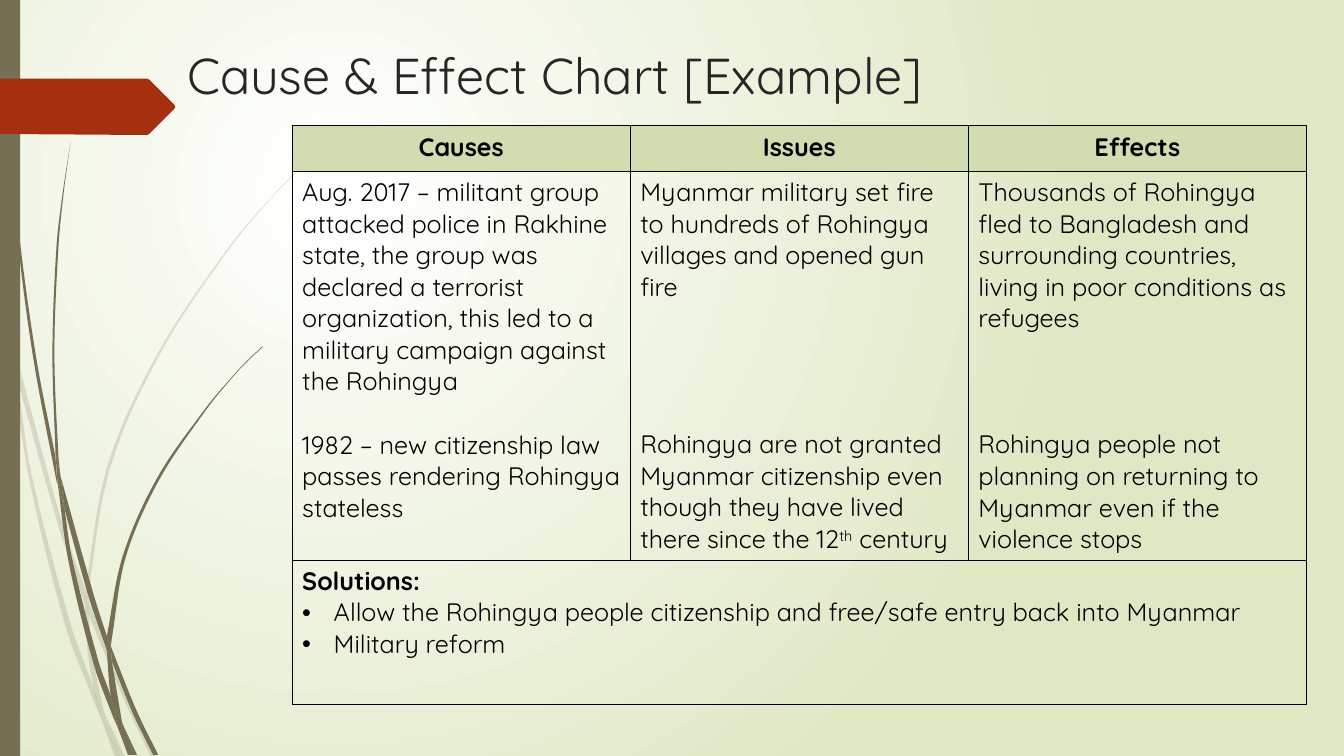
from dataclasses import dataclass
from itertools import product

from lxml.etree import SubElement
from pptx import Presentation
from pptx.dml.color import RGBColor as RGB
from pptx.enum.shapes import MSO_SHAPE as Shape
from pptx.enum.text import MSO_ANCHOR as Anchor, MSO_AUTO_SIZE as AutoSize, PP_ALIGN as Align
from pptx.oxml.ns import qn
from pptx.util import Pt


@dataclass(frozen=True)
class Theme:
    font: str = "Quicksand"
    title_size: float = 36
    body_size: float = 18
    title: str = "262626"
    ink: str = "000000"
    grass: str = "766F54"
    marker: str = "A53010"
    header: str = "D1DDB0"
    glow: str = "FFFFFF"
    backdrop: str = "DFE8C4"


THEME = Theme()
LINE = 22.5
HUNDREDTH_INCH = 72

FADED_BLADES = [
    ([(11, 350), (9, 322), (0, 282)], [(0, 299), (10, 344), (11, 348)]),
    ([(17, 376), (58, 522), (84, 599)], [(85, 586), (62, 520), (14, 345)]),
    ([(88, 596), (92, 607), (127, 692), (155, 751)], [(150, 751), (123, 694), (88, 610)]),
    ([(105, 711), (124, 751)], [(119, 751)]),
    ([(11, 350), (17, 376), (31, 469), (70, 619), (93, 683), (101, 714)],
     [(92, 693), (65, 621), (28, 470), (11, 350)]),
    ([(84, 599), (87, 646), (93, 683), (96, 692), (105, 711)],
     [(103, 706), (91, 646), (88, 610), (84, 599)]),
    ([(88, 596), (88, 584), (110, 462), (160, 349), (229, 245), (268, 198), (290, 175), (312, 154)],
     [(312, 153), (289, 175), (268, 197), (228, 244), (158, 348), (107, 461), (85, 584), (85, 586)]),
    ([(101, 714), (114, 751)], [(119, 751)]),
    ([(88, 610), (88, 596)], [(85, 586), (84, 599)]),
    ([(93, 683), (99, 707), (101, 714), (119, 751)], [(105, 711), (96, 692)]),
]
DARK_BLADES = [
    ([(3, 0), (4, 48), (7, 110), (17, 233), (33, 355), (56, 477), (57, 481)],
     [(55, 453), (36, 355), (19, 232), (8, 109), (5, 48), (4, 0)]),
    ([(64, 505), (88, 592), (106, 645)], [(106, 631), (93, 590), (60, 472)]),
    ([(110, 641), (113, 649), (136, 706), (157, 749)], [(152, 749), (132, 708), (111, 656)]),
    ([(57, 477), (68, 557), (93, 659), (111, 708), (117, 722)],
     [(116, 717), (110, 691), (98, 657), (72, 556), (64, 505)]),
    ([(60, 472), (58, 453), (54, 349), (58, 245), (63, 193), (70, 141)],
     [(70, 141), (62, 193), (56, 245), (52, 349), (55, 449)]),
    ([(122, 719), (136, 749)], [(133, 749)]),
    ([(57, 477), (64, 505)], [(60, 472), (55, 449)]),
    ([(110, 641), (111, 633), (125, 552), (158, 476), (205, 406), (231, 374), (245, 359), (261, 344)],
     [(260, 344), (245, 358), (231, 373), (204, 405), (156, 474), (122, 551), (106, 631)]),
    ([(117, 722), (127, 749)], [(131, 749)]),
    ([(106, 645), (110, 691), (116, 706), (122, 719)], [(121, 716), (111, 656)]),
    ([(106, 645), (111, 656)], [(110, 641), (106, 631)]),
    ([(110, 691), (116, 717), (117, 722), (130, 749)], [(133, 749), (122, 719), (116, 706)]),
]
MARKER = [(0, 78), (146, 78), (148, 79), (173, 104), (174, 106), (173, 108),
          (148, 133), (146, 134), (0, 133)]

HEADERS = ["Causes", "Issues", "Effects"]
DETAILS = [
    (["Aug. 2017 – militant group attacked police in Rakhine state, the group was declared "
      "a terrorist organization, this led to a military campaign against the Rohingya"],
     ["1982 – new citizenship law passes rendering Rohingya stateless"], 1),
    (["Myanmar military set fire to hundreds of Rohingya villages and opened gun fire"],
     ["Rohingya are not granted Myanmar citizenship even though they have lived there since the 12",
      "th", " century"], 4),
    (["Thousands of Rohingya fled to Bangladesh and surrounding countries, living in poor "
      "conditions as refugees"],
     ["Rohingya people not planning on returning to Myanmar even if the violence stops"], 3),
]
SOLUTIONS = ["Allow the Rohingya people citizenship and free/safe entry back into Myanmar",
             "Military reform"]


def assign(target, values):
    for key, value in values.items():
        setattr(target, key, value)


def paint(shape, color, alpha=None):
    shape.shadow.inherit = False
    shape.line.fill.background()
    shape.fill.solid()
    shape.fill.fore_color.rgb = RGB.from_string(color)
    if alpha:
        tint = shape._element.spPr.find(".//" + qn("a:srgbClr"))
        SubElement(tint, qn("a:alpha"), val=str(alpha * 1000))


def edge_handles(edge):
    knots = [complex(*point) for point in edge]
    lengths = [abs(b - a) for a, b in zip(knots, knots[1:])]
    slopes = []
    for i in range(len(knots) if lengths else 0):
        lo, hi = max(i - 1, 0), min(i + 1, len(lengths))
        slopes.append((knots[hi] - knots[lo]) / sum(lengths[lo:hi]))
    return [(knots[i] + slopes[i] * length / 3, knots[i + 1] - slopes[i + 1] * length / 3)
            for i, length in enumerate(lengths)]


def add_outline(shapes, points, color, alpha=None):
    start, *rest = [(x * HUNDREDTH_INCH, y * HUNDREDTH_INCH) for x, y in points]
    builder = shapes.build_freeform(*start, scale=Pt(0.01))
    builder.add_line_segments(rest, close=True)
    outline = builder.convert_to_shape()
    paint(outline, color, alpha)
    return outline


def add_blade(shapes, outward, back, alpha):
    points = outward + back
    blade = add_outline(shapes, points, THEME.grass, alpha)
    corner = complex(min(x for x, _ in points), min(y for _, y in points))
    handles = edge_handles(outward) + [None] + edge_handles(back)
    for segment, pair in zip(blade._element.findall(".//" + qn("a:lnTo")), handles):
        if pair:
            end = segment[0]
            segment.tag = qn("a:cubicBezTo")
            for handle in pair:
                spot = (handle - corner) * HUNDREDTH_INCH
                SubElement(segment, qn("a:pt"), x=str(round(spot.real)), y=str(round(spot.imag)))
            segment.append(end)


def add_backdrop(slide):
    fill = slide.background.fill
    fill.gradient()
    for stop, color in zip(fill.gradient_stops, (THEME.glow, THEME.backdrop)):
        stop.color.rgb = RGB.from_string(color)
    gradient = slide._element.find(".//" + qn("a:gradFill"))
    gradient.remove(gradient.find(qn("a:lin")))
    circle = SubElement(gradient, qn("a:path"), path="circle")
    SubElement(circle, qn("a:fillToRect"), l="50000", t="50000", r="100000", b="100000")


def add_decor(slide):
    decor = []
    for blades, alpha in ((FADED_BLADES, 20), (DARK_BLADES, None)):
        tuft = slide.shapes.add_group_shape()
        for outward, back in blades:
            add_blade(tuft.shapes, outward, back, alpha)
        decor.append(tuft)
    stripe = slide.shapes.add_shape(Shape.RECTANGLE, 0, 0, Pt(14.4), Pt(540))
    paint(stripe, THEME.grass)
    decor += [stripe, add_outline(slide.shapes, MARKER, THEME.marker)]
    for part in decor:
        slide.slide_layout.shapes._spTree.append(part._element)


def write(paragraph, pieces, size=THEME.body_size, color=THEME.ink, bold=False, **layout):
    assign(paragraph, layout)
    for piece in pieces:
        run = paragraph.add_run()
        run.text = piece
        assign(run.font, {"name": THEME.font, "size": Pt(size), "bold": bold})
        run.font.color.rgb = RGB.from_string(color)
        if piece == "th":
            run._r.get_or_add_rPr().set("baseline", "30000")


def add_bullet(paragraph):
    properties = paragraph._p.get_or_add_pPr()
    properties.set("marL", str(Pt(LINE)))
    properties.set("indent", str(-Pt(LINE)))
    SubElement(properties, qn("a:buFont"), typeface="Arial")
    SubElement(properties, qn("a:buChar"), char="•")


def add_title(slide, text):
    title = slide.shapes.title
    assign(title, {"left": Pt(126.72), "top": Pt(28.08), "width": Pt(828), "height": Pt(63.36)})
    assign(title.text_frame, {"word_wrap": True, "auto_size": AutoSize.NONE,
                              "vertical_anchor": Anchor.TOP})
    write(title.text_frame.paragraphs[0], [text], THEME.title_size, THEME.title,
          alignment=Align.LEFT)


def frame_cell(cell, fill=None):
    properties = cell._tc.get_or_add_tcPr()
    for side in ("lnL", "lnR", "lnT", "lnB"):
        border = SubElement(properties, qn("a:" + side), w=str(Pt(1)))
        SubElement(SubElement(border, qn("a:solidFill")), qn("a:srgbClr"), val=THEME.ink)
    if fill:
        cell.fill.solid()
        cell.fill.fore_color.rgb = RGB.from_string(fill)
    else:
        cell.fill.background()


def add_chart_table(slide):
    table = slide.shapes.add_table(3, 3, Pt(208.7), Pt(89.9), Pt(724.5), Pt(404.64)).table
    assign(table, {"first_row": False, "horz_banding": False})
    for column in table.columns:
        column.width = Pt(241.5)
    for row, height in zip(table.rows, (32.4, 269.28, 102.96)):
        row.height = Pt(height)
    for row, column in product(range(3), repeat=2):
        frame_cell(table.cell(row, column), None if row else THEME.header)
    for column, (header, (recent, lasting, gap)) in enumerate(zip(HEADERS, DETAILS)):
        heading = table.cell(0, column).text_frame.paragraphs[0]
        write(heading, [header], bold=True, alignment=Align.CENTER)
        details = table.cell(1, column).text_frame
        write(details.paragraphs[0], recent)
        write(details.add_paragraph(), lasting, space_before=Pt(gap * LINE))
    table.cell(2, 0).merge(table.cell(2, 2))
    solutions = table.cell(2, 0).text_frame
    write(solutions.paragraphs[0], ["Solutions:"], bold=True)
    for solution in SOLUTIONS:
        item = solutions.add_paragraph()
        write(item, [solution])
        add_bullet(item)


def main():
    deck = Presentation()
    assign(deck, {"slide_width": Pt(960), "slide_height": Pt(540)})
    slide = deck.slides.add_slide(deck.slide_layouts[5])
    add_backdrop(slide)
    add_decor(slide)
    add_title(slide, "Cause & Effect Chart [Example]")
    add_chart_table(slide)
    deck.save("out.pptx")


if __name__ == "__main__":
    main()
